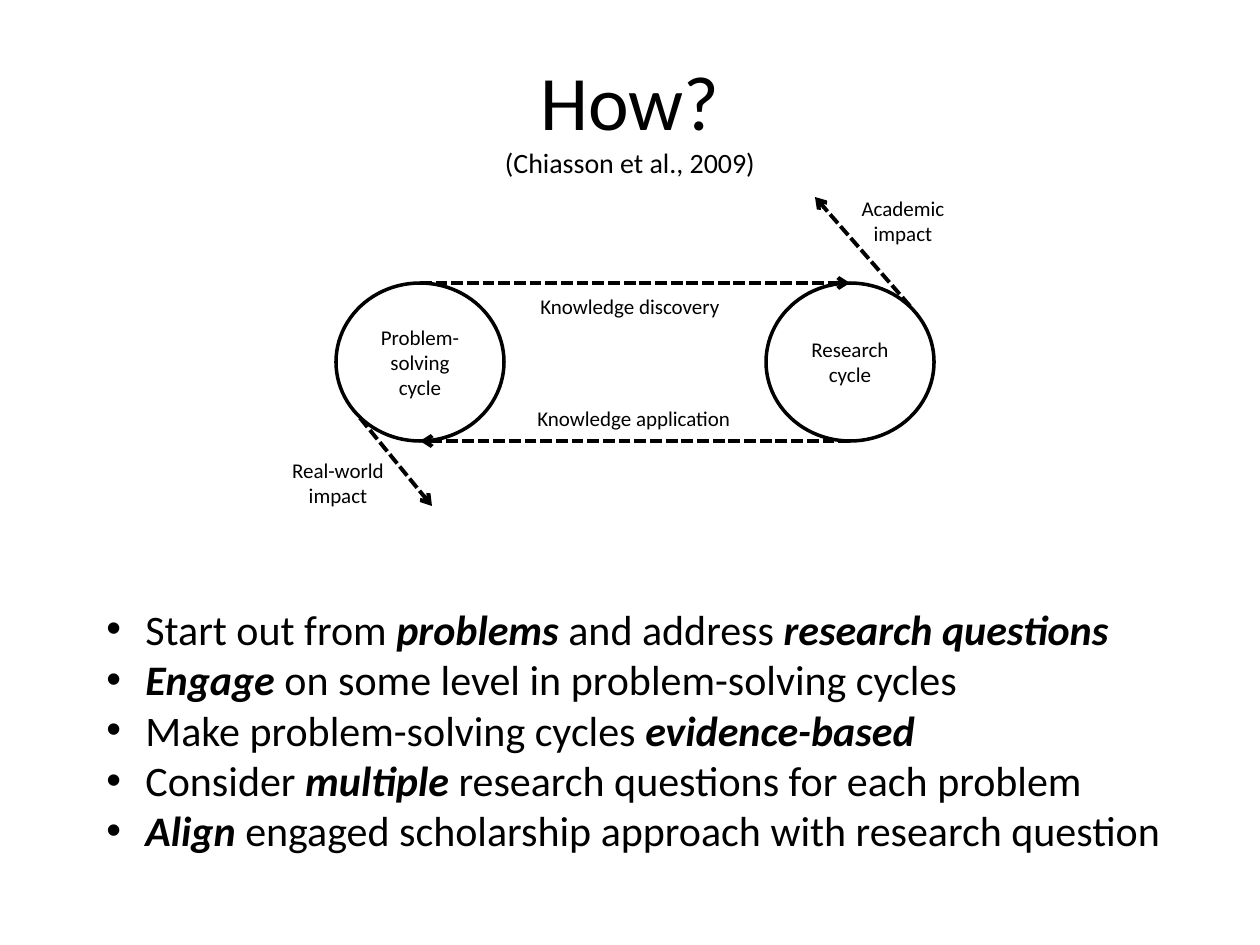
from lxml.etree import SubElement
from pptx import Presentation
from pptx.dml.color import RGBColor
from pptx.enum.dml import MSO_LINE
from pptx.enum.shapes import MSO_CONNECTOR, MSO_SHAPE
from pptx.enum.text import MSO_ANCHOR, MSO_AUTO_SIZE, PP_ALIGN
from pptx.oxml.ns import qn
from pptx.util import Emu, Pt

BLACK = RGBColor(0, 0, 0)
FONT = "Calibri"
SCALE = 914400 / 126  # EMU in one px

# Content: places are left, top, width, height in px
TITLE = [("How?", 44), ("(Chiasson et al., 2009)", 16)]
TITLE_PLACE = (63, 38, 1134, 157)
CYCLE_SIZE = (168, 158)
CYCLE_TOP = 283
CYCLES = [("Problem-solving cycle", 336), ("Research cycle", 766)]
LABELS = [  # text, place, wraps
    ("Knowledge discovery", (528, 287, 207, 38), False),
    ("Knowledge application", (525, 399, 220, 38), False),
    ("Academic impact", (840, 189, 126, 63), True),
    ("Real-world impact", (275, 451, 126, 63), True),
]
BULLETS_PLACE = (94, 597, 1103, 369)
BULLETS = [  # every second piece is emphasised
    ("Start out from ", "problems", " and address ", "research questions"),
    ("", "Engage", " on some level in problem-solving cycles"),
    ("Make problem-solving cycles ", "evidence-based"),
    ("Consider ", "multiple", " research questions for each problem"),
    ("", "Align", " engaged scholarship approach with research question"),
]
BULLET_INDENT = 39


def px(*lengths):
    return [Emu(round(length * SCALE)) for length in lengths]


def add_span(para, text, size, emphasis=False):
    span = para.add_run()
    span.text = text
    looks = {"name": FONT, "size": Pt(size), "bold": emphasis, "italic": emphasis}
    for name, value in looks.items():
        setattr(span.font, name, value)
    span.font.color.rgb = BLACK


def add_text_box(place, wraps=True):
    frame = slide.shapes.add_textbox(*px(*place)).text_frame
    frame.word_wrap = wraps
    frame.auto_size = MSO_AUTO_SIZE.SHAPE_TO_FIT_TEXT
    return frame


def add_cycle(text, left):
    cycle = slide.shapes.add_shape(
        MSO_SHAPE.OVAL, *px(left, CYCLE_TOP, *CYCLE_SIZE))
    cycle.shadow.inherit = False
    cycle.fill.background()
    cycle.line.color.rgb = BLACK
    cycle.line.width = Pt(2)
    frame = cycle.text_frame
    frame.word_wrap = True
    frame.vertical_anchor = MSO_ANCHOR.MIDDLE
    frame.paragraphs[0].alignment = PP_ALIGN.CENTER
    add_span(frame.paragraphs[0], text, 12)
    return cycle


def add_arrow(start, end):
    arrow = slide.shapes.add_connector(
        MSO_CONNECTOR.STRAIGHT, *px(*start, *end))
    arrow.line.color.rgb = BLACK
    arrow.line.width = Pt(2.25)
    arrow.line.dash_style = MSO_LINE.SQUARE_DOT
    SubElement(arrow.line._get_or_add_ln(), qn("a:tailEnd"), type="arrow")
    SubElement(arrow._element.spPr, qn("a:effectLst"))
    return arrow


deck = Presentation()
deck.slide_width, deck.slide_height = px(1260, 945)
slide = deck.slides.add_slide(deck.slide_layouts[5])

# Title with its source line
title = slide.shapes.title
title.left, title.top, title.width, title.height = px(*TITLE_PLACE)
title.text_frame.vertical_anchor = MSO_ANCHOR.MIDDLE
title_para = title.text_frame.paragraphs[0]
title_para.alignment = PP_ALIGN.CENTER
for index, (text, size) in enumerate(TITLE):
    if index:
        title_para.add_line_break()
    add_span(title_para, text, size)

# Two cycles
problem, research = [add_cycle(text, left) for text, left in CYCLES]

# Knowledge arrows between the tops and the bottoms of the cycles
problem_x, research_x = [left + CYCLE_SIZE[0] / 2 for _, left in CYCLES]
bottom = CYCLE_TOP + CYCLE_SIZE[1]
discovery = add_arrow((problem_x, CYCLE_TOP), (research_x, CYCLE_TOP))
discovery.begin_connect(problem, 0)
discovery.end_connect(research, 0)
add_arrow((research_x, bottom), (problem_x, bottom))

# Impact arrows leaving the cycles
add_arrow((910, 306), (815, 197))
add_arrow((360, 418), (432, 506))

# Labels
for text, place, wraps in LABELS:
    para = add_text_box(place, wraps).paragraphs[0]
    if wraps:
        para.alignment = PP_ALIGN.CENTER
    add_span(para, text, 12)

# Bullets
frame = add_text_box(BULLETS_PLACE)
indent, = px(BULLET_INDENT)
for index, pieces in enumerate(BULLETS):
    para = frame.add_paragraph() if index else frame.paragraphs[0]
    props = para._p.get_or_add_pPr()
    props.set("marL", str(indent))
    props.set("indent", str(-indent))
    SubElement(props, qn("a:buFont"), typeface="Arial")
    SubElement(props, qn("a:buChar"), char="•")
    for number, piece in enumerate(pieces):
        if piece:
            add_span(para, piece, 24, emphasis=number % 2 == 1)

deck.save("out.pptx")
